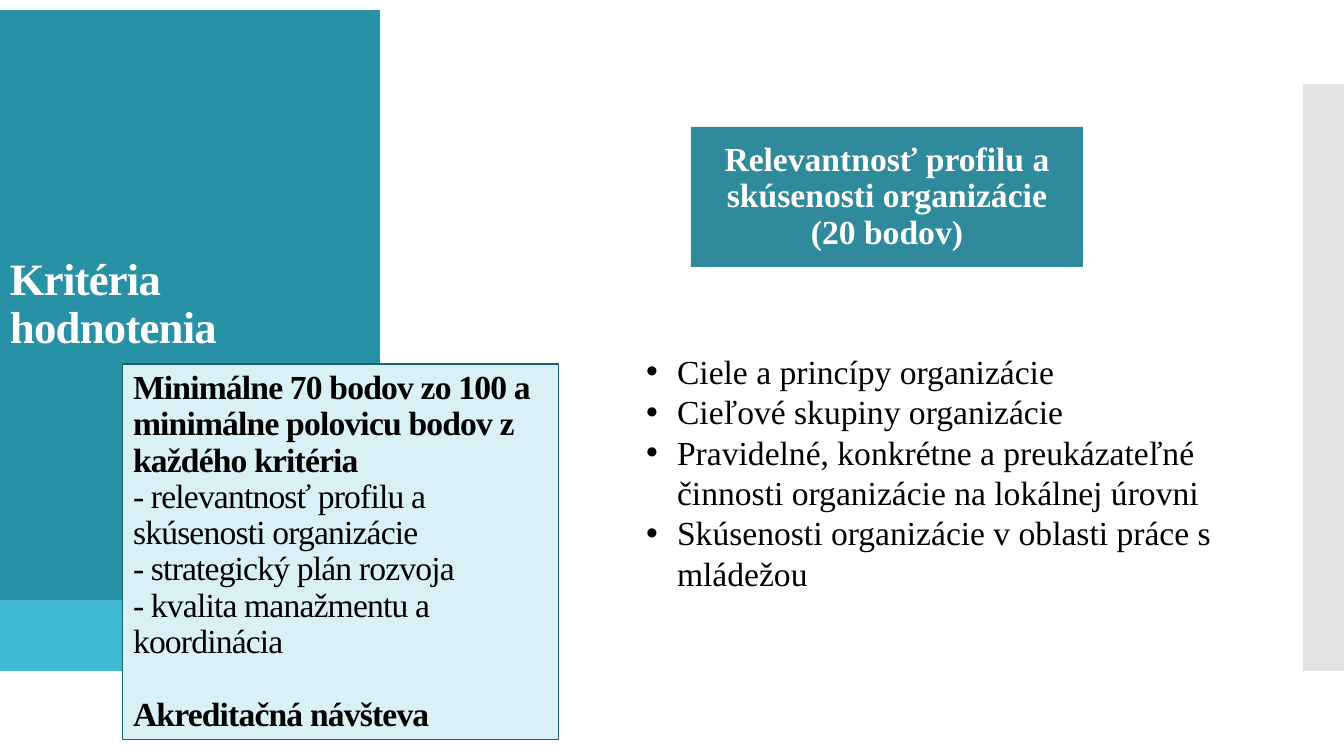
from pptx import Presentation
from pptx.dml.color import RGBColor
from pptx.enum.shapes import MSO_SHAPE
from pptx.enum.text import MSO_ANCHOR, MSO_AUTO_SIZE, PP_ALIGN
from pptx.oxml.ns import qn
from pptx.util import Emu, Pt
from lxml.etree import SubElement

EMU_PER_PX = 914400 / 100.8
FONT = "Times New Roman"
COLORS = {
    "aqua": "40BAD2",
    "teal": "2791A6",
    "deep_teal": "2F8A9B",
    "pale": "D9F1F6",
    "border": "1A616F",
    "gray": "C8C8C8",
    "white": "FFFFFF",
    "black": "000000",
}
REQUIREMENTS = [
    ("Minimálne 70 bodov zo 100 a", True),
    ("minimálne polovicu bodov z každého kritéria", True),
    ("- relevantnosť profilu a skúsenosti organizácie", False),
    ("- strategický plán rozvoja", False),
    ("- kvalita manažmentu a koordinácia", False),
    ("Akreditačná návšteva", True),
]
TOPICS = [
    "Ciele a princípy organizácie",
    "Cieľové skupiny organizácie",
    "Pravidelné, konkrétne a preukázateľné činnosti organizácie na lokálnej úrovni",
    "Skúsenosti organizácie v oblasti práce s mládežou",
]


def px(value):
    return Emu(round(value * EMU_PER_PX))


def color(name):
    return RGBColor.from_string(COLORS[name])


def set_all(target, values):
    for name, value in values.items():
        setattr(target, name, value)


def place(box, left, top, width, height):
    set_all(box, {"left": px(left), "top": px(top),
                  "width": px(width), "height": px(height)})


def fill_with(box, name):
    box.fill.solid()
    box.fill.fore_color.rgb = color(name)


def add_block(page, bounds, name, alpha=None):
    box = page.shapes.add_shape(MSO_SHAPE.RECTANGLE, *map(px, bounds))
    box.shadow.inherit = False
    fill_with(box, name)
    box.line.fill.background()
    if alpha is not None:
        shade = box.element.spPr.find(qn("a:solidFill"))[0]
        SubElement(shade, qn("a:alpha"), val=str(alpha * 1000))
    return box


def set_frame(box, anchor, margin=None):
    frame = box.text_frame
    set_all(frame, {"word_wrap": True, "auto_size": MSO_AUTO_SIZE.NONE,
                    "vertical_anchor": anchor})
    if margin is not None:
        sides = ("left", "top", "right", "bottom")
        set_all(frame, {f"margin_{side}": px(margin) for side in sides})


def write_lines(box, lines, ink, size=24, tracking=None, **para_format):
    frame = box.text_frame
    for index, (text, bold) in enumerate(lines):
        para = frame.add_paragraph() if index else frame.paragraphs[0]
        set_all(para, {"alignment": PP_ALIGN.LEFT, "space_before": Pt(0),
                       **para_format})
        span = para.add_run()
        span.text = text
        set_all(span.font, {"name": FONT, "size": Pt(size), "bold": bold})
        span.font.color.rgb = color(ink)
        if tracking is not None:
            span.font._element.set("spc", str(tracking))


def add_backdrop(page):
    add_block(page, (0, 84, 380, 587), "aqua")
    add_block(page, (1303, 84, 41, 587), "gray", alpha=50)
    heading = add_block(page, (0, 10, 380, 590), "teal")
    set_frame(heading, MSO_ANCHOR.MIDDLE)
    write_lines(heading, [("Kritéria hodnotenia", True)], "white", size=32,
                tracking=-60, line_spacing=0.9)


def fill_topics(page):
    box = page.placeholders[1]
    place(box, 636, 346, 646, 254)
    set_frame(box, MSO_ANCHOR.TOP)
    write_lines(box, [(topic, False) for topic in TOPICS], "black")
    for para in box.text_frame.paragraphs:
        properties = para._p.get_or_add_pPr()
        properties.set("marL", str(px(31)))
        properties.set("indent", str(px(-31)))
    page.shapes.element.append(box.element)


def fill_requirements(page):
    box = page.shapes.title
    place(box, 123, 364, 436, 376)
    fill_with(box, "pale")
    box.line.color.rgb = color("border")
    box.line.width = Pt(0.75)
    set_frame(box, MSO_ANCHOR.MIDDLE)
    write_lines(box, REQUIREMENTS, "black", tracking=-60, line_spacing=0.9)
    box.text_frame.paragraphs[-1].space_before = Pt(26)
    page.shapes.element.append(box.element)


def add_criterion(page):
    box = add_block(page, (691, 127, 392, 140), "deep_teal")
    set_frame(box, MSO_ANCHOR.MIDDLE, margin=12)
    write_lines(box,
                [("Relevantnosť profilu a skúsenosti organizácie (20 bodov)", True)],
                "white", alignment=PP_ALIGN.CENTER, line_spacing=0.9)


def main():
    deck = Presentation()
    set_all(deck, {"slide_width": px(1344), "slide_height": px(756)})
    page = deck.slides.add_slide(deck.slide_layouts[1])
    add_backdrop(page)
    fill_topics(page)
    fill_requirements(page)
    add_criterion(page)
    deck.save("out.pptx")


if __name__ == "__main__":
    main()
